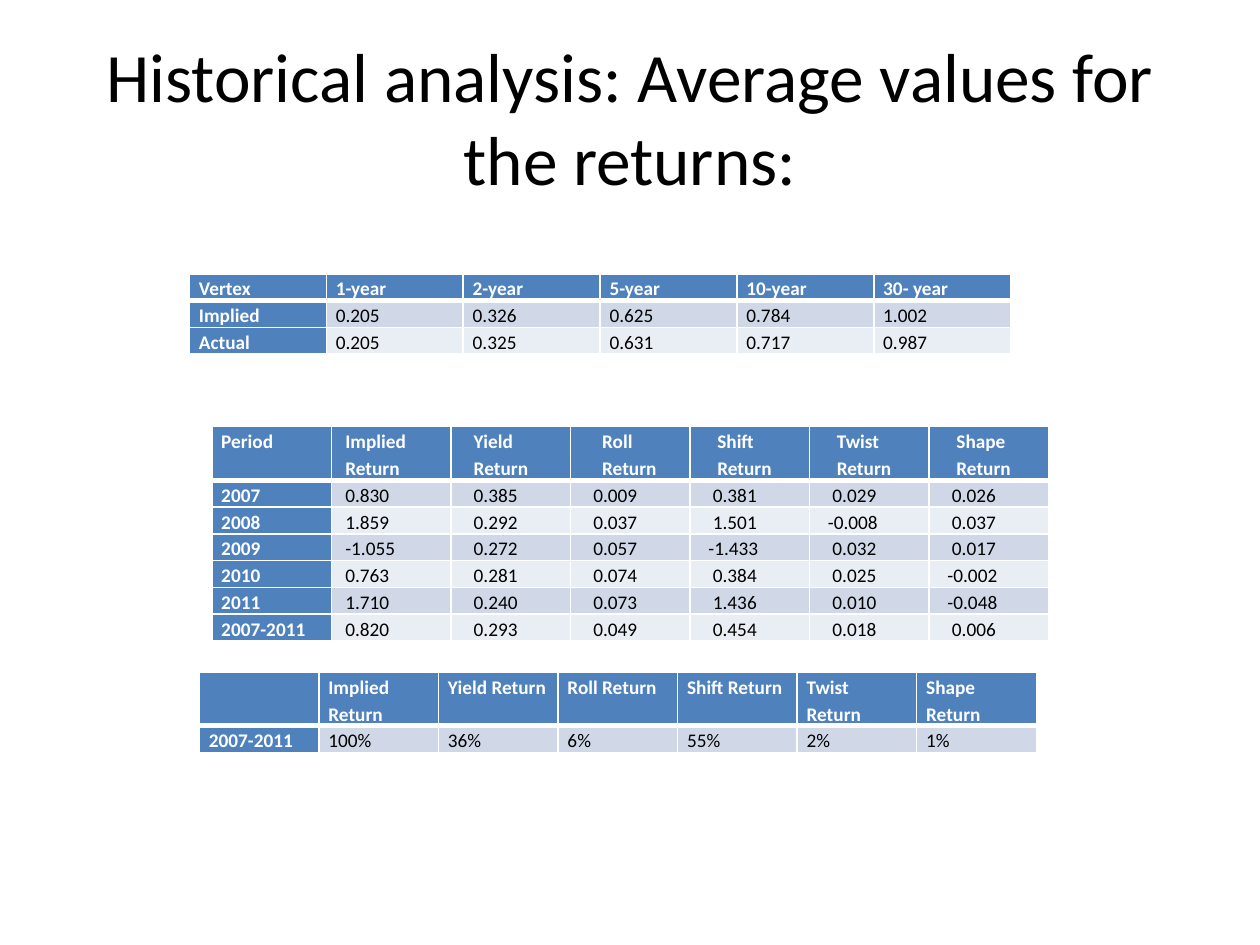
from dataclasses import dataclass

import lxml.etree
import pptx
import pptx.dml.color
import pptx.enum.text
import pptx.oxml.ns
import pptx.util
from pptx.util import Cm

WHITE = pptx.dml.color.RGBColor(0xFF, 0xFF, 0xFF)
BLACK = pptx.dml.color.RGBColor(0x00, 0x00, 0x00)
HEADER_BLUE = pptx.dml.color.RGBColor(0x4F, 0x81, 0xBD)
BAND_DARK = pptx.dml.color.RGBColor(0xD0, 0xD8, 0xE8)
BAND_LIGHT = pptx.dml.color.RGBColor(0xE9, 0xED, 0xF4)

FONT = "Calibri"
LINE_HEIGHT = 0.54
CELL_MARGIN = 0.19
INDENT_STEP = 0.09
THIN, THICK = 1, 3


@dataclass
class ReturnTable:
    left: float
    top: float
    column_width: float
    header_lines: int
    rows: list[list[str]]
    # Indent steps for each column, in the header and in the body
    header_indents: tuple[int, ...] = (0,) * 7
    body_indents: tuple[int, ...] = (0,) * 7


TABLES = [
    # Implied and actual returns by vertex
    ReturnTable(3.82, 5.52, 2.76, 1, [
        ["Vertex", "1-year", "2-year", "5-year", "10-year", "30- year"],
        ["Implied", "0.205", "0.326", "0.625", "0.784", "1.002"],
        ["Actual", "0.205", "0.325", "0.631", "0.717", "0.987"],
    ]),
    # Return components by period
    ReturnTable(4.27, 8.6, 2.41, 2, [
        ["Period", "Implied\nReturn", "Yield\nReturn", "Roll\nReturn",
         "Shift\nReturn", "Twist\nReturn", "Shape\nReturn"],
        ["2007", "0.830", "0.385", "0.009", "0.381", "0.029", "0.026"],
        ["2008", "1.859", "0.292", "0.037", "1.501", "-0.008", "0.037"],
        ["2009", "-1.055", "0.272", "0.057", "-1.433", "0.032", "0.017"],
        ["2010", "0.763", "0.281", "0.074", "0.384", "0.025", "-0.002"],
        ["2011", "1.710", "0.240", "0.073", "1.436", "0.010", "-0.048"],
        ["2007-2011", "0.820", "0.293", "0.049", "0.454", "0.018", "0.006"],
    ], (0, 1, 3, 5, 4, 4, 4), (0, 1, 3, 3, 3, 3, 3)),
    # Share of each component
    ReturnTable(4.02, 13.55, 2.41, 2, [
        ["", "Implied Return", "Yield Return", "Roll Return",
         "Shift Return", "Twist Return", "Shape Return"],
        ["2007-2011", "100%", "36%", "6%", "55%", "2%", "1%"],
    ]),
]


def add_run(paragraph, text: str, size: float,
            color: pptx.dml.color.RGBColor, bold: bool = False) -> None:
    run = paragraph.add_run()
    run.text = text
    run.font.name = FONT
    run.font.size = pptx.util.Pt(size)
    run.font.bold = bold
    run.font.color.rgb = color


def set_borders(cell, top: float, bottom: float) -> None:
    properties = cell._tc.get_or_add_tcPr()
    qn = pptx.oxml.ns.qn
    for side, width in (("L", THIN), ("R", THIN), ("T", top), ("B", bottom)):
        line = lxml.etree.SubElement(properties, qn(f"a:ln{side}"),
                                     w=str(pptx.util.Pt(width)))
        fill = lxml.etree.SubElement(line, qn("a:solidFill"))
        lxml.etree.SubElement(fill, qn("a:srgbClr"), val=str(WHITE))


def fill_cell(cell, text: str, row: int, column: int, indent: int) -> None:
    is_heading = row == 0 or column == 0
    set_borders(cell, THICK if row == 1 else THIN, THICK if row == 0 else THIN)
    cell.fill.solid()
    band = BAND_DARK if row % 2 else BAND_LIGHT
    cell.fill.fore_color.rgb = HEADER_BLUE if is_heading else band

    # A minus sign hangs one step left of the digits
    if text.startswith("-") and indent > 1:
        indent -= 1
    cell.margin_left = Cm(CELL_MARGIN + indent * INDENT_STEP)
    cell.margin_right = Cm(CELL_MARGIN)
    cell.margin_top = cell.margin_bottom = Cm(0)

    frame = cell.text_frame
    for index, words in enumerate(text.split("\n") if text else []):
        paragraph = frame.add_paragraph() if index else frame.paragraphs[0]
        paragraph.line_spacing = 1.15
        add_run(paragraph, words, 11, WHITE if is_heading else BLACK, is_heading)


def add_return_table(slide, data: ReturnTable) -> None:
    row_count, column_count = len(data.rows), len(data.rows[0])
    line_count = data.header_lines + row_count - 1
    table = slide.shapes.add_table(
        row_count, column_count, Cm(data.left), Cm(data.top),
        Cm(column_count * data.column_width), Cm(line_count * LINE_HEIGHT)).table
    table.first_col = True
    for column in table.columns:
        column.width = Cm(data.column_width)
    for row_index, texts in enumerate(data.rows):
        lines = 1 if row_index else data.header_lines
        table.rows[row_index].height = Cm(lines * LINE_HEIGHT)
        indents = data.body_indents if row_index else data.header_indents
        for column_index, text in enumerate(texts):
            fill_cell(table.cell(row_index, column_index), text,
                      row_index, column_index, indents[column_index])


def add_title(slide, text: str) -> None:
    shape = slide.shapes.add_textbox(Cm(1.27), Cm(0.76), Cm(22.86), Cm(3.18))
    frame = shape.text_frame
    frame.word_wrap = True
    frame.vertical_anchor = pptx.enum.text.MSO_ANCHOR.MIDDLE
    paragraph = frame.paragraphs[0]
    paragraph.alignment = pptx.enum.text.PP_ALIGN.CENTER
    add_run(paragraph, text, 39.6, BLACK)


def main() -> None:
    presentation = pptx.Presentation()
    presentation.slide_width = Cm(25.4)
    presentation.slide_height = Cm(19.05)
    slide = presentation.slides.add_slide(presentation.slide_layouts[6])
    add_title(slide, "Historical analysis: Average values for the returns:")
    for data in TABLES:
        add_return_table(slide, data)
    presentation.save("out.pptx")


if __name__ == "__main__":
    main()
